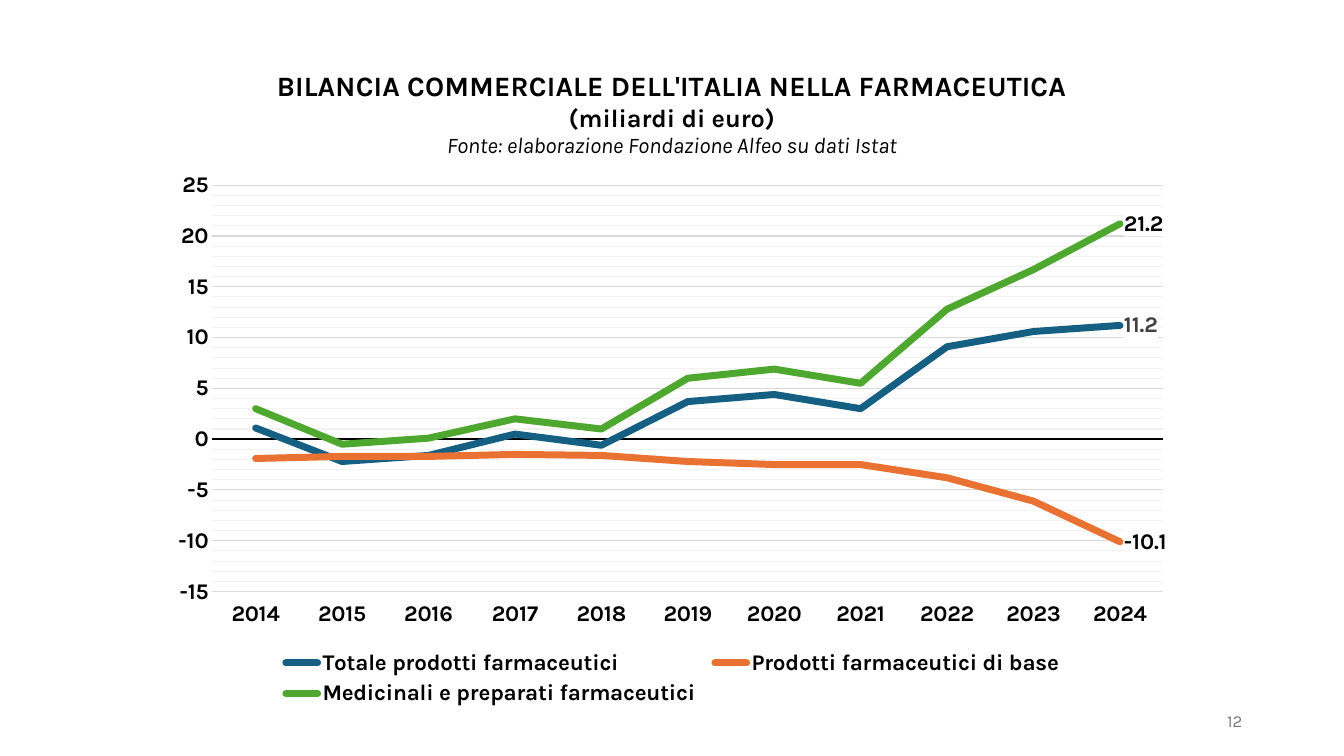
"""Builds a slide with a line chart of Italy's pharmaceutical trade balance."""
import lxml.etree
import pptx
import pptx.chart.data
import pptx.dml.color
import pptx.enum.chart
import pptx.enum.text
import pptx.oxml
import pptx.oxml.ns
import pptx.util

Inches, Pt = pptx.util.Inches, pptx.util.Pt
RGBColor = pptx.dml.color.RGBColor
qn = pptx.oxml.ns.qn
NS = pptx.oxml.ns.nsdecls("c", "a")

BLACK = RGBColor(0x00, 0x00, 0x00)
DARK = RGBColor(0x40, 0x40, 0x40)
GREY = RGBColor(0x79, 0x79, 0x79)
MAJOR = RGBColor(0xD9, 0xD9, 0xD9)
MINOR = RGBColor(0xF2, 0xF2, 0xF2)
WHITE = RGBColor(0xFF, 0xFF, 0xFF)
BLUE = RGBColor(0x15, 0x60, 0x82)
ORANGE = RGBColor(0xE9, 0x71, 0x32)
GREEN = RGBColor(0x4E, 0xA7, 0x2E)


def style(font, size, color=BLACK, bold=True, italic=False):
    font.name, font.size = "Karla", Pt(size)
    font.bold, font.italic = bold, italic
    font.color.rgb = color


def place(part, index, inner=False, **spots):
    for old in part.findall(qn("c:layout")):
        part.remove(old)
    layout = pptx.oxml.parse_xml(f"<c:layout {NS}><c:manualLayout/></c:layout>")
    manual = layout[0]
    if inner:
        lxml.etree.SubElement(manual, qn("c:layoutTarget")).set("val", "inner")
    for key in "xy":
        lxml.etree.SubElement(manual, qn(f"c:{key}Mode")).set("val", "edge")
    for key, value in spots.items():
        lxml.etree.SubElement(manual, qn(f"c:{key}")).set("val", str(value))
    part.insert(index, layout)


deck = pptx.Presentation()
deck.slide_width, deck.slide_height = Inches(13.33), Inches(7.5)
slide = deck.slides.add_slide(deck.slide_layouts[6])

SERIES = [
    ("Totale prodotti farmaceutici", BLUE, DARK,
     [1.1, -2.2, -1.6, 0.5, -0.6, 3.7, 4.4, 3.0, 9.1, 10.6, 11.2]),
    ("Prodotti farmaceutici di base", ORANGE, BLACK,
     [-1.9, -1.7, -1.7, -1.5, -1.6, -2.2, -2.5, -2.5, -3.8, -6.1, -10.1]),
    ("Medicinali e preparati farmaceutici", GREEN, BLACK,
     [3.0, -0.5, 0.1, 2.0, 1.0, 6.0, 6.9, 5.5, 12.8, 16.7, 21.2]),
]
data = pptx.chart.data.CategoryChartData()
data.categories = [str(year) for year in range(2014, 2025)]
for name, color, ink, values in SERIES:
    data.add_series(name, values)
chart = slide.shapes.add_chart(
    pptx.enum.chart.XL_CHART_TYPE.LINE,
    Inches(1.6), Inches(0.45), Inches(10.14), Inches(6.61), data).chart
style(chart.font, 10, bold=False)

TITLE = [
    ("BILANCIA COMMERCIALE DELL'ITALIA NELLA FARMACEUTICA", 20, True),
    ("(miliardi di euro)", 18, True),
    ("Fonte: elaborazione Fondazione Alfeo su dati Istat", 16, False),
]
frame = chart.chart_title.text_frame
for row, (text, size, bold) in enumerate(TITLE):
    para = frame.add_paragraph() if row else frame.paragraphs[0]
    para.text = text
    style(para.font, size, bold=bold, italic=not bold)
place(chart._chartSpace.chart.find(qn("c:title")), 1, x=0.11, y=0.03)

years, scale = chart.category_axis, chart.value_axis
for axis in (years, scale):
    axis.major_tick_mark = pptx.enum.chart.XL_TICK_MARK.NONE
    axis.minor_tick_mark = pptx.enum.chart.XL_TICK_MARK.NONE
    style(axis.tick_labels.font, 16)
years.tick_label_position = pptx.enum.chart.XL_TICK_LABEL_POSITION.LOW
years.format.line.color.rgb = BLACK
years.format.line.width = Pt(1.5)
scale.format.line.fill.background()
scale.minimum_scale, scale.maximum_scale = -15, 25
scale.major_unit, scale.minor_unit = 5, 1
scale.tick_labels.number_format = "#,##0"
scale.tick_labels.number_format_is_linked = False
scale.has_major_gridlines = scale.has_minor_gridlines = True
scale.major_gridlines.format.line.color.rgb = MAJOR
scale.major_gridlines.format.line.width = Pt(0.75)
scale._element.find(qn("c:minorGridlines")).append(pptx.oxml.parse_xml(
    f'<c:spPr {NS}><a:ln w="{Pt(0.75)}"><a:solidFill>'
    f'<a:srgbClr val="{MINOR}"/></a:solidFill></a:ln></c:spPr>'))
place(chart._chartSpace.chart.plotArea, 0, inner=True, x=0.05, y=0.21, w=0.93, h=0.61)

for line, (name, color, ink, values) in zip(chart.plots[0].series, SERIES):
    line.smooth = False
    line.format.line.color.rgb = color
    line.format.line.width = Pt(5)
    line._element.find(qn("c:spPr")).find(qn("a:ln")).set("cap", "rnd")
    line.data_labels.show_value = False
    label = line.points[len(values) - 1].data_label
    style(label.font, 16, ink)
    label.position = pptx.enum.chart.XL_LABEL_POSITION.RIGHT
    text = line._element.find(f".//{qn('c:dLbl')}/{qn('c:txPr')}")
    for old in text.getparent().findall(qn("c:spPr")):
        text.getparent().remove(old)
    text.addprevious(pptx.oxml.parse_xml(
        f'<c:spPr {NS}><a:solidFill><a:srgbClr val="{WHITE}"/></a:solidFill></c:spPr>'))

chart.has_legend = True
legend = chart.legend
legend.position = pptx.enum.chart.XL_LEGEND_POSITION.BOTTOM
legend.include_in_layout = False
style(legend.font, 16)
place(legend._element, 1, x=0.11, y=0.9, w=0.78, h=0.1)

box = slide.shapes.add_textbox(Inches(9.42), Inches(6.95), Inches(3), Inches(0.4))
frame = box.text_frame
frame.word_wrap = True
frame.vertical_anchor = pptx.enum.text.MSO_ANCHOR.MIDDLE
para = frame.paragraphs[0]
para.text = "12"
para.alignment = pptx.enum.text.PP_ALIGN.RIGHT
style(para.font, 12, GREY, bold=False)

deck.save("out.pptx")
